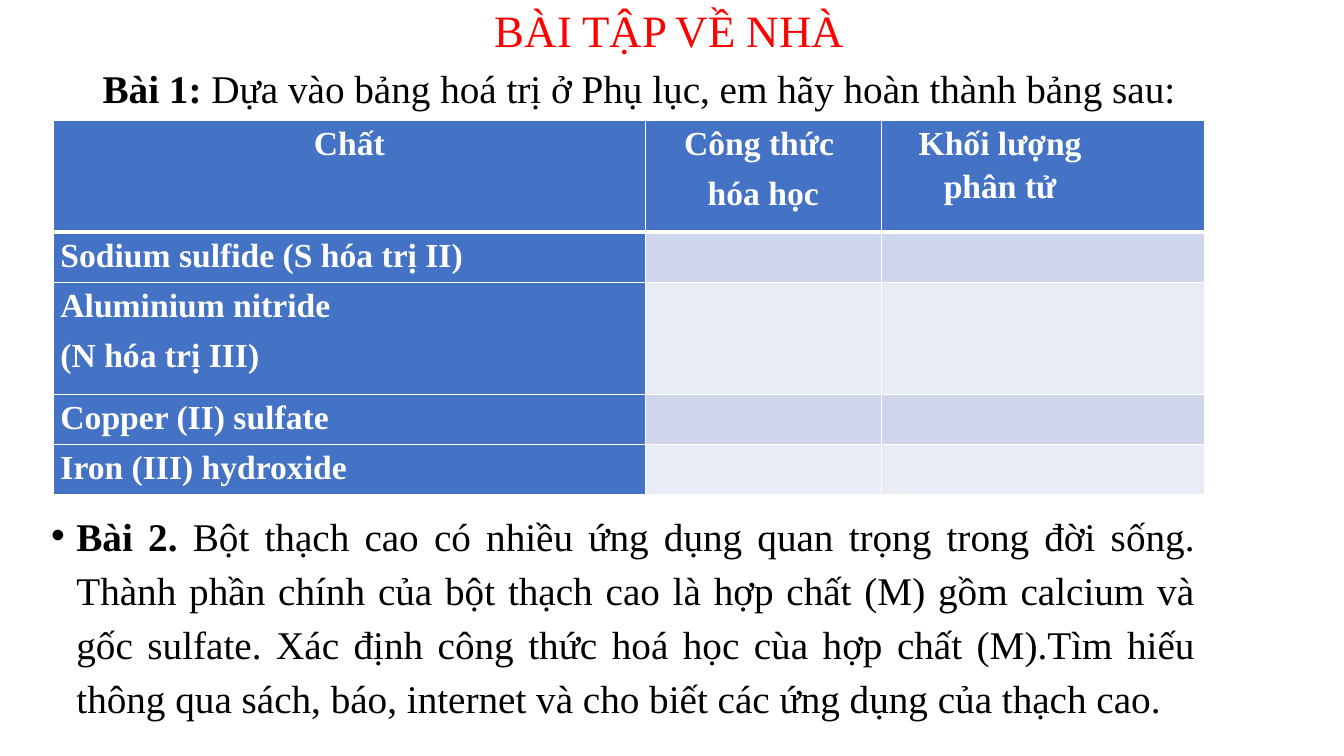
from lxml.etree import SubElement as Sub
from pptx import Presentation as Deck
from pptx.dml.color import RGBColor as Color
from pptx.enum.text import MSO_ANCHOR as Anchor, PP_ALIGN as Align
from pptx.oxml import parse_xml as parse
from pptx.oxml.ns import nsdecls, qn
from pptx.util import Inches, Pt


def rgb(code):
    return Color.from_string(code)


def put(item, vals):
    for name, val in vals.items():
        setattr(item, name, val)


class Sheet:
    """Holds the style and the current slide, and adds each kind of element."""

    font = "Times New Roman"
    blue, white, black, red = "4472C4", "FFFFFF", "000000", "FF0000"
    bands = "CFD5EA", "E9EBF5"
    loose = dict(line_spacing=1.15, space_before=Pt(2), space_after=Pt(3))

    def __init__(self, deck):
        self.slide = deck.slides.add_slide(deck.slide_layouts[6])

    def para(self, par, runs, size, tint, form):
        put(par, form)
        for text, bold in runs:
            run = par.add_run()
            run.text = text
            put(run.font, dict(name=self.font, size=Pt(size), bold=bold))
            run.font.color.rgb = rgb(tint)

    def text(self, box, runs, size, tint, form, anchor=Anchor.TOP):
        frame = self.slide.shapes.add_textbox(*map(Inches, box)).text_frame
        put(frame, dict(word_wrap=True, vertical_anchor=anchor))
        self.para(frame.paragraphs[0], runs, size, tint, form)
        return frame.paragraphs[0]

    def bullet(self, par, mark, indent):
        props = par._p.get_or_add_pPr()
        props.set("marL", str(Inches(indent)))
        props.set("indent", str(-Inches(indent)))
        Sub(props, qn("a:buFont")).set("typeface", "Arial")
        Sub(props, qn("a:buChar")).set("char", mark)

    def edges(self, cell, top, base):
        props = cell._tc.get_or_add_tcPr()
        for pos, (side, wide) in enumerate(zip("LRTB", (1, 1, top, base))):
            props.insert(pos, parse(
                f'<a:ln{side} {nsdecls("a")} w="{Pt(wide)}"><a:solidFill>'
                f'<a:srgbClr val="{self.white}"/></a:solidFill></a:ln{side}>'))

    def fill(self, cell, lines, align):
        put(cell, dict(margin_left=Inches(0.07), margin_right=Inches(0.07),
                       margin_top=0, margin_bottom=0))
        frame = cell.text_frame
        for num, line in enumerate(lines):
            par = frame.add_paragraph() if num else frame.paragraphs[0]
            self.para(par, [(line, True)], 24, self.white,
                      dict(self.loose, alignment=align))

    def table(self, box, cols, rows, heads, names):
        grid = self.slide.shapes.add_table(
            len(rows), len(cols), *map(Inches, box)).table
        for col, wide in zip(grid.columns, cols):
            col.width = Inches(wide)
        for row, high in zip(grid.rows, rows):
            row.height = Inches(high)
        for r in range(len(rows)):
            for c in range(len(cols)):
                cell = grid.cell(r, c)
                label = r == 0 or c == 0
                cell.fill.solid()
                cell.fill.fore_color.rgb = rgb(
                    self.blue if label else self.bands[(r - 1) % 2])
                self.edges(cell, 3 if r == 1 else 1, 3 if r == 0 else 1)
                if label:
                    self.fill(cell, names[r - 1] if r else heads[c],
                              Align.LEFT if r else Align.CENTER)
        return grid


def main():
    deck = Deck()
    put(deck, dict(slide_width=Inches(13.33), slide_height=Inches(7.5)))
    page = Sheet(deck)
    page.text((0.87, -0.09, 11.54, 0.84), [("BÀI TẬP VỀ NHÀ", False)], 32,
              page.red, dict(alignment=Align.CENTER, line_spacing=0.9),
              Anchor.MIDDLE)
    page.text((0.92, 0.64, 11.5, 0.68),
              [("Bài 1: ", True),
               ("Dựa vào bảng hoá trị ở Phụ lục, em hãy hoàn thành bảng sau:",
                False)],
              28, page.black, dict(line_spacing=0.9, space_before=Pt(10)))
    grid = page.table(
        (0.53, 1.19, 11.42, 3.73), (5.87, 2.34, 3.21),
        (1.11, 0.5, 1.11, 0.5, 0.5),
        [["Chất"], ["Công thức ", "hóa học"], ["Khối lượng phân tử"]],
        [["Sodium sulfide (S hóa trị II)"],
         ["Aluminium nitride", "(N hóa trị III)"],
         ["Copper (II) sulfate"], ["Iron (III) hydroxide"]])
    grid.cell(0, 2).margin_right = Inches(0.92)
    task = page.text(
        (0.41, 4.96, 11.54, 1.8),
        [("Bài 2. ", True),
         ("Bột thạch cao có nhiều ứng dụng quan trọng trong đời sống. "
          "Thành phần chính của bột thạch cao là hợp chất (M) gồm calcium và "
          "gốc sulfate. Xác định công thức hoá học cùa hợp chất (M).Tìm hiếu "
          "thông qua sách, báo, internet và cho biết các ứng dụng của "
          "thạch cao.", False)],
        28, page.black, dict(page.loose, alignment=Align.JUSTIFY))
    page.bullet(task, "•", 0.25)
    deck.save("out.pptx")


if __name__ == "__main__":
    main()
